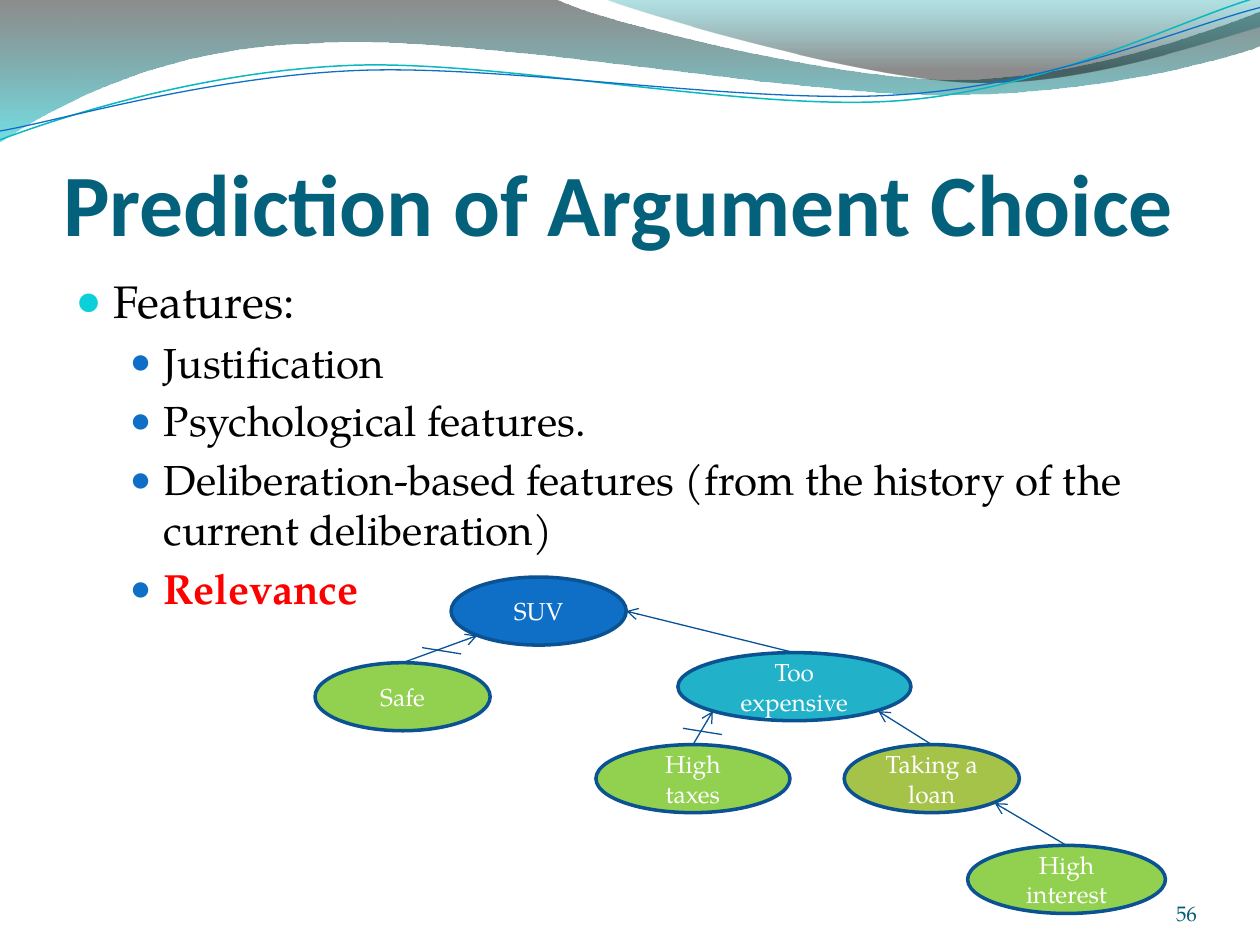
from lxml.etree import SubElement
from pptx import Presentation
from pptx.dml.color import RGBColor
from pptx.enum.shapes import MSO_CONNECTOR, MSO_SHAPE
from pptx.enum.text import MSO_ANCHOR, MSO_AUTO_SIZE, PP_ALIGN
from pptx.oxml.ns import qn
from pptx.util import Inches, Pt

TITLE = "Prediction of Argument Choice"
PAGE_NUMBER = "56"
# level, text, emphasised
FEATURES = [
    (0, "Features:", False),
    (1, "Justification", False),
    (1, "Psychological features.", False),
    (1, "Deliberation-based features (from the history of the current deliberation)", False),
    (1, "Relevance", True),
]
# argument: left, top, width, fill
ARGUMENTS = {
    "SUV": (3.58, 4.58, 1.39, "0F6FC6"),
    "Safe": (2.5, 5.26, 1.39, "92D050"),
    "Too expensive": (5.38, 5.18, 1.85, "21B2C9"),
    "High taxes": (4.73, 5.91, 1.54, "92D050"),
    "Taking a loan": (6.7, 5.91, 1.39, "A5C249"),
    "High interest": (7.68, 6.71, 1.57, "92D050"),
}
ARGUMENT_HEIGHT = 0.54
# child, parent, side of the parent that is reached
RELATIONS = [
    ("Safe", "SUV", "lower left"),
    ("Too expensive", "SUV", "right"),
    ("High taxes", "Too expensive", "lower left"),
    ("Taking a loan", "Too expensive", "lower right"),
    ("High interest", "Taking a loan", "lower right"),
]
SIDES = {"top": (0.5, 0), "right": (1, 0.5),
         "lower left": (0.15, 0.86), "lower right": (0.86, 0.86)}
ATTACK_MARKS = [(3.35, 5.14), (5.42, 5.78)]
ATTACK_STROKE = (0.31, 0.05)

# Each segment holds one point (straight) or three (cubic curve).
BANDS = [
    {"start": (0, 0),
     "segments": [[(4.4, -0.01)],
                  [(4.76, 0.17), (6.64, 0.63), (7.58, 0.63)],
                  [(8.53, 0.63), (9.58, 0.26), (10, 0.09)],
                  [(10.01, 0.36)],
                  [(9.83, 0.44), (8.7, 0.76), (7.46, 0.75)],
                  [(6.22, 0.75), (3.82, 0.28), (2.57, 0.34)],
                  [(1.29, 0.36), (0.46, 0.83), (-0.01, 1.13)]],
     "stops": [(0, "000000", 45), (1, "00C6CF", 55)]},
    {"start": (4.79, -0.01),
     "segments": [[(5.09, 0.11), (6.82, 0.62), (7.69, 0.65)],
                  [(8.56, 0.69), (9.61, 0.32), (10, 0.21)],
                  [(10, 0)]],
     "stops": [(0, "00A1A9", 30), (0.8, "000000", 45)]},
]
WAVES = [
    {"start": (0, 1.11),
     "segments": [[(0.48, 0.93), (1.58, 0.57), (2.77, 0.52)],
                  [(3.95, 0.47), (5.93, 0.89), (7.13, 0.8)],
                  [(8.33, 0.71), (9.38, 0.15), (9.98, -0.02)]],
     "line": ("0AB8BF", 0.85)},
    {"start": (0, 1.04),
     "segments": [[(0.47, 0.96), (1.64, 0.61), (2.83, 0.56)],
                  [(4.03, 0.51), (5.97, 0.84), (7.17, 0.75)],
                  [(8.36, 0.67), (9.41, 0.21), (10, 0.06)]],
     "line": ("0F6FC6", 0.75)},
]

SERIF = "TeX Gyre Pagella"
THEME = {
    "title": {"name": "Calibri", "size": Pt(50), "bold": True, "color": "04617B"},
    "levels": [
        {"font": {"name": SERIF, "size": Pt(26), "color": "000000"},
         "bullet": "0BD0D9", "bullet_size": 95, "margin": 0.3, "indent": -0.3},
        {"font": {"name": SERIF, "size": Pt(24), "color": "000000"},
         "bullet": "0F6FC6", "bullet_size": 85, "margin": 0.7, "indent": -0.27},
    ],
    "emphasis": {"bold": True, "color": "FF0000"},
    "argument": {"name": SERIF, "size": Pt(14), "color": "FFFFFF"},
    "number": {"name": SERIF, "size": Pt(12), "color": "045D75"},
    "outline": ("0B5292", 2),
    "relation": ("095295", 0.75),
    "feature_gap": Pt(4.7),
}
NO_MARGINS = dict.fromkeys(("margin_left", "margin_top", "margin_right", "margin_bottom"), 0)


def set_all(target, values):
    for name, value in values.items():
        setattr(target, name, value)


def add_run(paragraph, text, style):
    run = paragraph.add_run()
    run.text = text
    set_all(run.font, {key: style[key] for key in style if key != "color"})
    run.font.color.rgb = RGBColor.from_string(style["color"])


def set_line(line, style):
    color, width = style
    line.color.rgb = RGBColor.from_string(color)
    line.width = Pt(width)


def place(shape, left, top, width, height):
    set_all(shape, {"left": Inches(left), "top": Inches(top),
                    "width": Inches(width), "height": Inches(height)})


def add_outline(shapes, start, segments, close):
    """Draw all points as straight lines, then merge each group of three into a curve."""
    builder = shapes.build_freeform(*map(Inches, start))
    builder.add_line_segments([tuple(map(Inches, point)) for segment in segments
                               for point in segment], close=close)
    outline = builder.convert_to_shape()
    outline.shadow.inherit = False
    lines = iter(list(outline._element.iter(qn("a:lnTo"))))
    for segment in segments:
        first, *others = [next(lines) for _ in segment]
        if others:
            curve = first.makeelement(qn("a:cubicBezTo"))
            first.addprevious(curve)
            for line in (first, *others):
                curve.append(line[0])
                line.getparent().remove(line)
    return outline


def add_band(shapes, start, segments, stops):
    band = add_outline(shapes, start, segments, True)
    band.line.fill.background()
    band.fill.gradient()
    band.fill.gradient_angle = 270
    for stop, (position, color, _) in zip(band.fill.gradient_stops, stops):
        stop.position = position
        stop.color.rgb = RGBColor.from_string(color)
    for element, (_, _, opacity) in zip(band._element.spPr.iter(qn("a:srgbClr")), stops):
        SubElement(element, qn("a:alpha"), val=str(opacity * 1000))


def add_wave(shapes, start, segments, line):
    wave = add_outline(shapes, start, segments, False)
    wave.fill.background()
    set_line(wave.line, line)


def add_bullet(paragraph, level):
    properties = paragraph._p.get_or_add_pPr()
    properties.set("marL", str(Inches(level["margin"])))
    properties.set("indent", str(Inches(level["indent"])))
    color = SubElement(properties, qn("a:buClr"))
    SubElement(color, qn("a:srgbClr"), val=level["bullet"])
    SubElement(properties, qn("a:buSzPct"), val=str(level["bullet_size"] * 1000))
    SubElement(properties, qn("a:buChar"), char="●")


def add_argument(shapes, text, left, top, width, fill):
    ellipse = shapes.add_shape(MSO_SHAPE.OVAL, *map(Inches, (left, top, width, ARGUMENT_HEIGHT)))
    ellipse.shadow.inherit = False
    ellipse.fill.solid()
    ellipse.fill.fore_color.rgb = RGBColor.from_string(fill)
    set_line(ellipse.line, THEME["outline"])
    ellipse.text_frame.vertical_anchor = MSO_ANCHOR.MIDDLE
    paragraph = ellipse.text_frame.paragraphs[0]
    paragraph.alignment = PP_ALIGN.CENTER
    add_run(paragraph, text, THEME["argument"])


def point_on(argument, side):
    left, top, width, _ = ARGUMENTS[argument]
    across, down = SIDES[side]
    return left + across * width, top + down * ARGUMENT_HEIGHT


def add_relation(shapes, start, end, arrow):
    relation = shapes.add_connector(MSO_CONNECTOR.STRAIGHT, *map(Inches, (*start, *end)))
    set_line(relation.line, THEME["relation"])
    if arrow:
        SubElement(relation.line._get_or_add_ln(), qn("a:tailEnd"), type="arrow")
    SubElement(relation._element.spPr, qn("a:effectLst"))


def main():
    deck = Presentation()
    deck.slide_width, deck.slide_height = Inches(10), Inches(7.5)
    slide = deck.slides.add_slide(deck.slide_layouts[1])
    shapes = slide.shapes
    title, body = slide.placeholders

    for band in BANDS:
        add_band(shapes, **band)
    for wave in WAVES:
        add_wave(shapes, **wave)

    place(title, 0.5, 0.77, 9, 1.25)
    set_all(title.text_frame, {**NO_MARGINS, "margin_top": Inches(0.05), "word_wrap": True,
                               "vertical_anchor": MSO_ANCHOR.BOTTOM,
                               "auto_size": MSO_AUTO_SIZE.NONE})
    title.text_frame.paragraphs[0].alignment = PP_ALIGN.LEFT
    add_run(title.text_frame.paragraphs[0], TITLE, THEME["title"])

    place(body, 0.5, 2.12, 9, 4.8)
    body.text_frame.auto_size = MSO_AUTO_SIZE.NONE
    for index, (depth, text, emphasised) in enumerate(FEATURES):
        paragraph = body.text_frame.add_paragraph() if index else body.text_frame.paragraphs[0]
        level = THEME["levels"][depth]
        add_bullet(paragraph, level)
        set_all(paragraph, {"level": depth, "space_before": THEME["feature_gap"] if index else 0})
        add_run(paragraph, text, {**level["font"], **(THEME["emphasis"] if emphasised else {})})

    for text, layout in ARGUMENTS.items():
        add_argument(shapes, text, *layout)
    for child, parent, side in RELATIONS:
        add_relation(shapes, point_on(child, "top"), point_on(parent, side), True)
    for x, y in ATTACK_MARKS:
        add_relation(shapes, (x, y), (x + ATTACK_STROKE[0], y + ATTACK_STROKE[1]), False)

    number = shapes.add_textbox(*map(Inches, (8.67, 6.95, 0.83, 0.4)))
    set_all(number.text_frame, {**NO_MARGINS, "word_wrap": True,
                                "vertical_anchor": MSO_ANCHOR.BOTTOM})
    number.text_frame.paragraphs[0].alignment = PP_ALIGN.RIGHT
    add_run(number.text_frame.paragraphs[0], PAGE_NUMBER, THEME["number"])

    deck.save("out.pptx")


if __name__ == "__main__":
    main()
